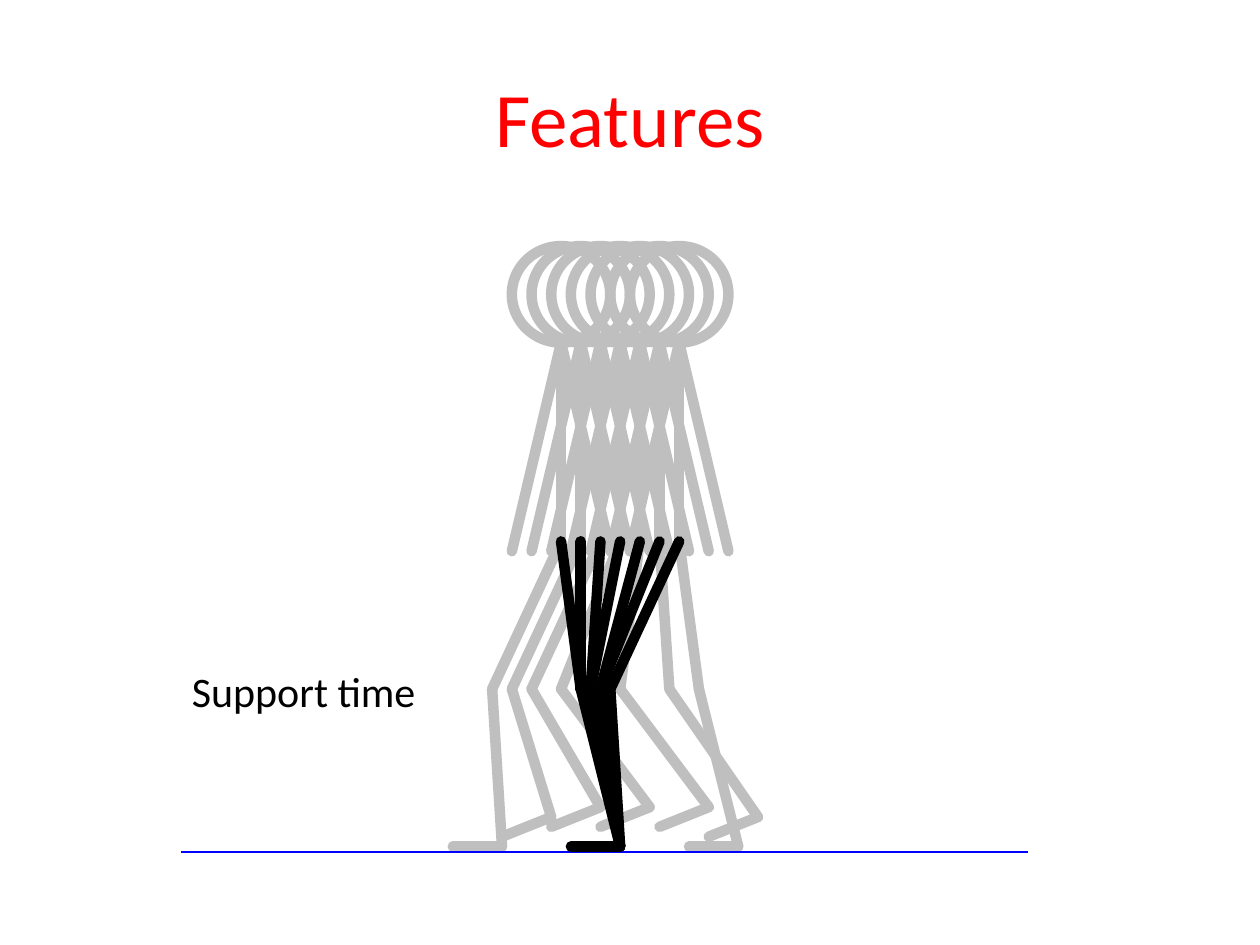
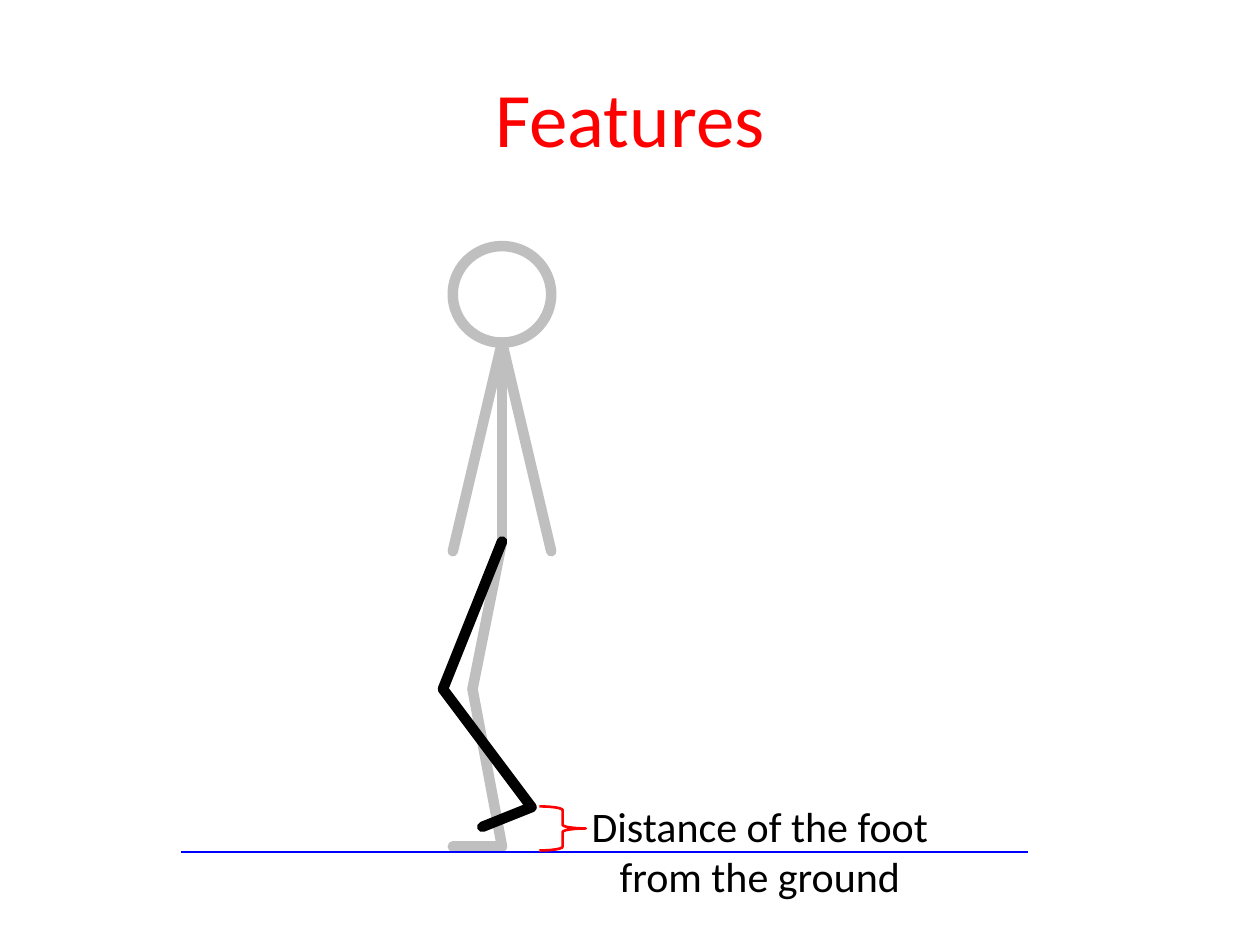
from lxml.etree import SubElement
from pptx import Presentation
from pptx.dml.color import RGBColor
from pptx.enum.shapes import MSO_CONNECTOR, MSO_SHAPE as SHAPE
from pptx.enum.text import MSO_ANCHOR, MSO_AUTO_SIZE, PP_ALIGN
from pptx.oxml.ns import qn
from pptx.util import Pt

# Shared look
FONT = "Calibri"
RED, BLUE, BLACK, GREY = "FF0000", "0000FF", "000000", "BFBFBF"
LIMB_WIDTH = 6

# The figures stand on a fine grid; lengths are in points
GRID = 45 / 8
HIP_Y = 55 * GRID
KNEE_DROP = 15          # grid steps below the hip
GROUND_DROP = 31
FOOT_LENGTH = 5

TITLE_BOX = (36, 21.6, 648, 90)
GROUND_BOX = (103.7, 486.7, 483.8, 0)


def colour(hex_code):
    return RGBColor.from_string(hex_code)


def style_outline(part, hex_code, width):
    part.line.color.rgb = colour(hex_code)
    part.line.width = Pt(width)


def add_line(shapes, start, end, hex_code, width, cap="flat"):
    line = shapes.add_connector(MSO_CONNECTOR.STRAIGHT, *map(Pt, start + end))
    style_outline(line, hex_code, width)
    properties = line.element.spPr
    properties.find(qn("a:ln")).set("cap", cap)
    SubElement(properties, qn("a:effectLst"))


def add_outline(shapes, preset, box, hex_code, width):
    outline = shapes.add_shape(preset, *map(Pt, box))
    outline.shadow.inherit = False
    outline.fill.background()
    style_outline(outline, hex_code, width)


def write(paragraph, text, size, hex_code):
    paragraph.alignment = PP_ALIGN.CENTER
    run = paragraph.add_run()
    run.text = text
    run.font.name = FONT
    run.font.size = Pt(size)
    run.font.color.rgb = colour(hex_code)


def add_title(slide, box, text):
    title = slide.shapes.title
    title.left, title.top, title.width, title.height = map(Pt, box)
    title.text_frame.vertical_anchor = MSO_ANCHOR.MIDDLE
    write(title.text_frame.paragraphs[0], text, 44, RED)


def add_label(slide, box, lines):
    frame = slide.shapes.add_textbox(*map(Pt, box)).text_frame
    frame.word_wrap = False
    frame.auto_size = MSO_AUTO_SIZE.SHAPE_TO_FIT_TEXT
    for index, text in enumerate(lines):
        paragraph = frame.add_paragraph() if index else frame.paragraphs[0]
        write(paragraph, text, 24, BLACK)


def add_ground(slide, box):
    left, top, width, _ = box
    add_line(slide.shapes, (left + width, top), (left, top), BLUE, 1)


# Walker: every offset is in grid steps from the hip
def from_hip(hip, dx, dy):
    return hip[0] + dx * GRID, hip[1] + dy * GRID


def add_limb(shapes, hip, joints, hex_code):
    points = [from_hip(hip, *joint) for joint in joints]
    for start, end in zip(points, points[1:]):
        add_line(shapes, start, end, hex_code, LIMB_WIDTH, "rnd")


def add_body(slide, hip):
    shapes = slide.shapes.add_group_shape().shapes
    neck = (0, -20.2)
    add_limb(shapes, hip, [neck, (0, 0)], GREY)
    head_box = from_hip(hip, -5, -30) + (10 * GRID, 9.8 * GRID)
    add_outline(shapes, SHAPE.OVAL, head_box, GREY, LIMB_WIDTH)
    for hand_dx in (5, -5):
        add_limb(shapes, hip, [neck, (hand_dx, 1)], GREY)


def add_leg(slide, hip, knee_dx, ankle, hex_code):
    ankle_dx, ankle_dy = ankle
    toe_drop = 0 if ankle_dy == GROUND_DROP else 2
    toe = (ankle_dx - FOOT_LENGTH, ankle_dy + toe_drop)
    joints = [(0, 0), (knee_dx, KNEE_DROP), ankle, toe]
    add_limb(slide.shapes.add_group_shape().shapes, hip, joints, hex_code)


def add_support_leg(slide, hip, knees, ankle_dx):
    """Thighs fan out from the moving hip while the foot stays put."""
    ankle = (ankle_dx, GROUND_DROP)
    for hip_dx, knee_dx in knees.items():
        add_limb(slide.shapes, hip, [(hip_dx, 0), (knee_dx, KNEE_DROP)], BLACK)
    for knee_dx in sorted(set(knees.values())):
        add_limb(slide.shapes, hip, [(knee_dx, KNEE_DROP), ankle], BLACK)
    add_limb(slide.shapes, hip, [ankle, (ankle_dx - FOOT_LENGTH, GROUND_DROP)], BLACK)


def new_slide(deck):
    slide = deck.slides.add_slide(deck.slide_layouts[5])
    add_title(slide, TITLE_BOX, "Features")
    return slide


def build_support_time(deck):
    slide = new_slide(deck)
    first_hip = (57 * GRID, HIP_Y)
    stride = 2
    # Knee offset and ankle of the swinging leg, one per frame
    swing_frames = [
        (-7, (-6, 31)), (-7, (-3, 28)), (-7, (0, 27)), (-6, (3, 27)),
        (-2, (7, 27)), (1, (10, 28)), (2, (6, 31)),
    ]
    hips = [from_hip(first_hip, stride * i, 0) for i in range(len(swing_frames))]
    for hip in reversed(hips):
        add_body(slide, hip)
    for hip, (knee_dx, ankle) in zip(hips, swing_frames):
        add_leg(slide, hip, knee_dx, ankle, GREY)

    add_ground(slide, GROUND_BOX)
    support_knees = {0: 2, 2: 2, 4: 3, 6: 3, 8: 4, 10: 4, 12: 5}
    add_support_leg(slide, first_hip, support_knees, 6)
    add_label(slide, (101.5, 376.6, 144, 36), ["Support time"])


def build_foot_distance(deck):
    slide = new_slide(deck)
    hip = (51 * GRID, HIP_Y)
    add_leg(slide, hip, -3, (0, GROUND_DROP), GREY)
    add_body(slide, hip)
    add_leg(slide, hip, -6, (3, 27), BLACK)

    add_ground(slide, GROUND_BOX)
    add_label(slide, (329.8, 453.6, 208.8, 65.5),
              ["Distance of the foot", "from the ground"])
    add_outline(slide.shapes, SHAPE.RIGHT_BRACE, (308.2, 460.8, 26.6, 25.2), RED, 1.5)


def main():
    deck = Presentation()
    deck.slide_width, deck.slide_height = Pt(720), Pt(540)
    build_support_time(deck)
    build_foot_distance(deck)
    deck.save("out.pptx")


if __name__ == "__main__":
    main()
